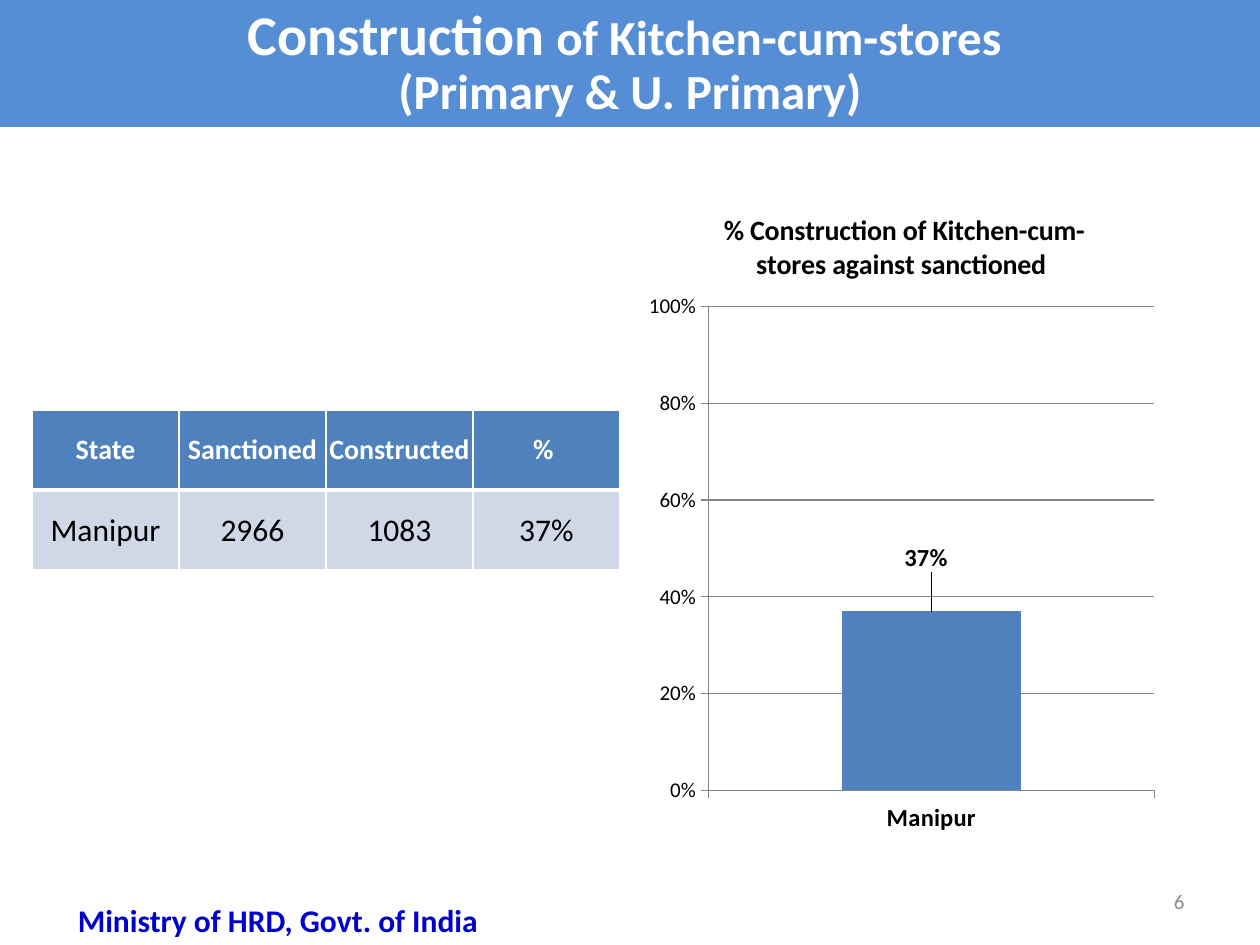
from lxml.etree import SubElement
from pptx import Presentation
from pptx.chart.data import CategoryChartData
from pptx.dml.color import RGBColor
from pptx.enum.chart import XL_CHART_TYPE, XL_LABEL_POSITION, XL_TICK_MARK
from pptx.enum.shapes import MSO_SHAPE
from pptx.enum.text import MSO_ANCHOR, PP_ALIGN
from pptx.oxml import parse_xml
from pptx.oxml.ns import nsdecls, qn
from pptx.util import Pt

PX = 914400 / 126
WHITE = RGBColor(0xFF, 0xFF, 0xFF)
BLACK = RGBColor(0x00, 0x00, 0x00)
BANNER_BLUE = RGBColor(0x55, 0x8E, 0xD5)
DATA_BLUE = RGBColor(0x4F, 0x81, 0xBD)
ROW_BLUE = RGBColor(0xD0, 0xD8, 0xE8)
FOOTER_BLUE = RGBColor(0x00, 0x00, 0xCC)
NUMBER_GRAY = RGBColor(0x8C, 0x8C, 0x8C)
AXIS_GRAY = RGBColor(0x86, 0x86, 0x86)


def emu(*lengths):
    """Turn px lengths into EMU."""
    return [round(length * PX) for length in lengths]


def assign(target, values):
    """Set every attribute named in a dict of format values."""
    for name, value in values.items():
        setattr(target, name, value)


def style_font(font, size, color, bold=False):
    """Apply the deck's typeface with a size, color and weight."""
    assign(font, {"name": "Calibri", "size": Pt(size), "bold": bold})
    font.color.rgb = color


def write(paragraph, pieces, color, bold=False, align=PP_ALIGN.CENTER):
    """Fill a paragraph with (text, size) pieces."""
    paragraph.alignment = align
    for text, size in pieces:
        run = paragraph.add_run()
        run.text = text
        style_font(run.font, size, color, bold)


def add_banner(slide, box):
    """Draw the heading band with its two lines."""
    banner = slide.shapes.add_shape(MSO_SHAPE.RECTANGLE, *emu(*box))
    banner.shadow.inherit = False
    banner.fill.solid()
    banner.fill.fore_color.rgb = BANNER_BLUE
    banner.line.fill.background()
    frame = banner.text_frame
    assign(frame, {"word_wrap": True, "vertical_anchor": MSO_ANCHOR.MIDDLE})
    lines = [
        [("Construction", 32), (" of Kitchen-cum-stores ", 28)],
        [("(Primary & U. Primary)", 28)],
    ]
    for index, pieces in enumerate(lines):
        paragraph = frame.add_paragraph() if index else frame.paragraphs[0]
        paragraph.line_spacing = 0.9
        write(paragraph, pieces, WHITE, bold=True)


def add_borders(cell, widths):
    """Give a cell white borders from a side-to-points mapping."""
    properties = cell._tc.get_or_add_tcPr()
    for index, (side, points) in enumerate(widths.items()):
        border = parse_xml(
            f'<a:ln{side} {nsdecls("a")} w="{Pt(points)}"><a:solidFill>'
            f'<a:srgbClr val="{WHITE}"/></a:solidFill></a:ln{side}>'
        )
        properties.insert(index, border)


def add_progress_table(slide, box):
    """Place the state table in equal columns and rows."""
    rows = [
        ("State", "Sanctioned", "Constructed", "% "),
        ("Manipur", "2966", "1083", "37%"),
    ]
    styles = [
        (DATA_BLUE, 16, WHITE, True, 0, {"L": 1, "R": 1, "T": 1, "B": 3}),
        (ROW_BLUE, 18, BLACK, False, 1, {"L": 1, "R": 1, "T": 3, "B": 1}),
    ]
    table = slide.shapes.add_table(len(rows), len(rows[0]), *emu(*box)).table
    for row, (fill, size, color, bold, inset, borders) in enumerate(styles):
        margin = emu(inset)[0]
        for column, text in enumerate(rows[row]):
            cell = table.cell(row, column)
            assign(cell, {
                "vertical_anchor": MSO_ANCHOR.MIDDLE,
                "margin_left": margin,
                "margin_right": margin,
                "margin_top": margin,
                "margin_bottom": 0,
            })
            cell.fill.solid()
            cell.fill.fore_color.rgb = fill
            add_borders(cell, borders)
            write(cell.text_frame.paragraphs[0], [(text, size)], color, bold)


def set_layout(element, position, **values):
    """Fix a chart part's place as fractions of the chart."""
    for layout in element.findall(qn("c:layout")):
        element.remove(layout)
    layout = parse_xml(f'<c:layout {nsdecls("c")}><c:manualLayout/></c:layout>')
    for name, value in values.items():
        SubElement(layout[0], qn(f"c:{name}")).set("val", str(value))
    element.insert(position, layout)


def add_progress_chart(slide, box):
    """Place the column chart of construction progress."""
    data = CategoryChartData(number_format="0%")
    data.categories = ["Manipur"]
    data.add_series("Series 1", [0.37])
    chart = slide.shapes.add_chart(
        XL_CHART_TYPE.COLUMN_CLUSTERED, *emu(*box), data
    ).chart
    assign(chart, {"has_legend": False, "has_title": True})
    style_font(chart.font, 18, BLACK)
    heading = chart.chart_title
    write(
        heading.text_frame.paragraphs[0],
        [("% Construction of Kitchen-cum-stores against sanctioned ", 16)],
        BLACK,
        bold=True,
    )
    set_layout(heading._element, 1, xMode="edge", yMode="edge", x=0.15, y=0.04)
    set_layout(
        chart._chartSpace.chart.plotArea, 0, layoutTarget="inner",
        xMode="edge", yMode="edge", x=0.13, y=0.19, w=0.85, h=0.72,
    )

    percent_axis, state_axis = chart.value_axis, chart.category_axis
    assign(percent_axis, {
        "minimum_scale": 0,
        "maximum_scale": 1,
        "major_unit": 0.2,
        "has_major_gridlines": True,
    })
    assign(percent_axis.tick_labels, {
        "number_format": "0%", "number_format_is_linked": False,
    })
    for axis, size, bold in ((percent_axis, 12, False), (state_axis, 14, True)):
        axis.major_tick_mark = XL_TICK_MARK.OUTSIDE
        style_font(axis.tick_labels.font, size, BLACK, bold)
    for part in (percent_axis, state_axis, percent_axis.major_gridlines):
        part.format.line.color.rgb = AXIS_GRAY
        part.format.line.width = Pt(0.75)

    plot = chart.plots[0]
    assign(plot, {"gap_width": 150, "vary_by_categories": False})
    progress = plot.series[0]
    progress.format.fill.solid()
    progress.format.fill.fore_color.rgb = DATA_BLUE
    label = progress.points[0].data_label
    style_font(label.font, 14, BLACK, bold=True)
    label.position = XL_LABEL_POSITION.OUTSIDE_END
    set_layout(label._dLbl, 1, x=-0.01, y=-0.05)


def add_note(slide, box, text, size, color, bold, align, anchor):
    """Place a single line of text."""
    frame = slide.shapes.add_textbox(*emu(*box)).text_frame
    assign(frame, {"word_wrap": True, "vertical_anchor": anchor})
    write(frame.paragraphs[0], [(text, size)], color, bold, align)


def main():
    """Build and save the slide."""
    deck = Presentation()
    deck.slide_width, deck.slide_height = emu(1260, 945)
    slide = deck.slides.add_slide(deck.slide_layouts[6])
    add_banner(slide, (0, 0, 1260, 127))
    add_progress_table(slide, (32, 410, 588, 160))
    add_progress_chart(slide, (640, 179, 525, 672))
    add_note(slide, (903, 876, 294, 50), "6", 12, NUMBER_GRAY, False,
             PP_ALIGN.RIGHT, MSO_ANCHOR.MIDDLE)
    add_note(slide, (31, 895, 494, 50), "Ministry of HRD, Govt. of India", 18,
             FOOTER_BLUE, True, PP_ALIGN.CENTER, MSO_ANCHOR.TOP)
    deck.save("out.pptx")


if __name__ == "__main__":
    main()
